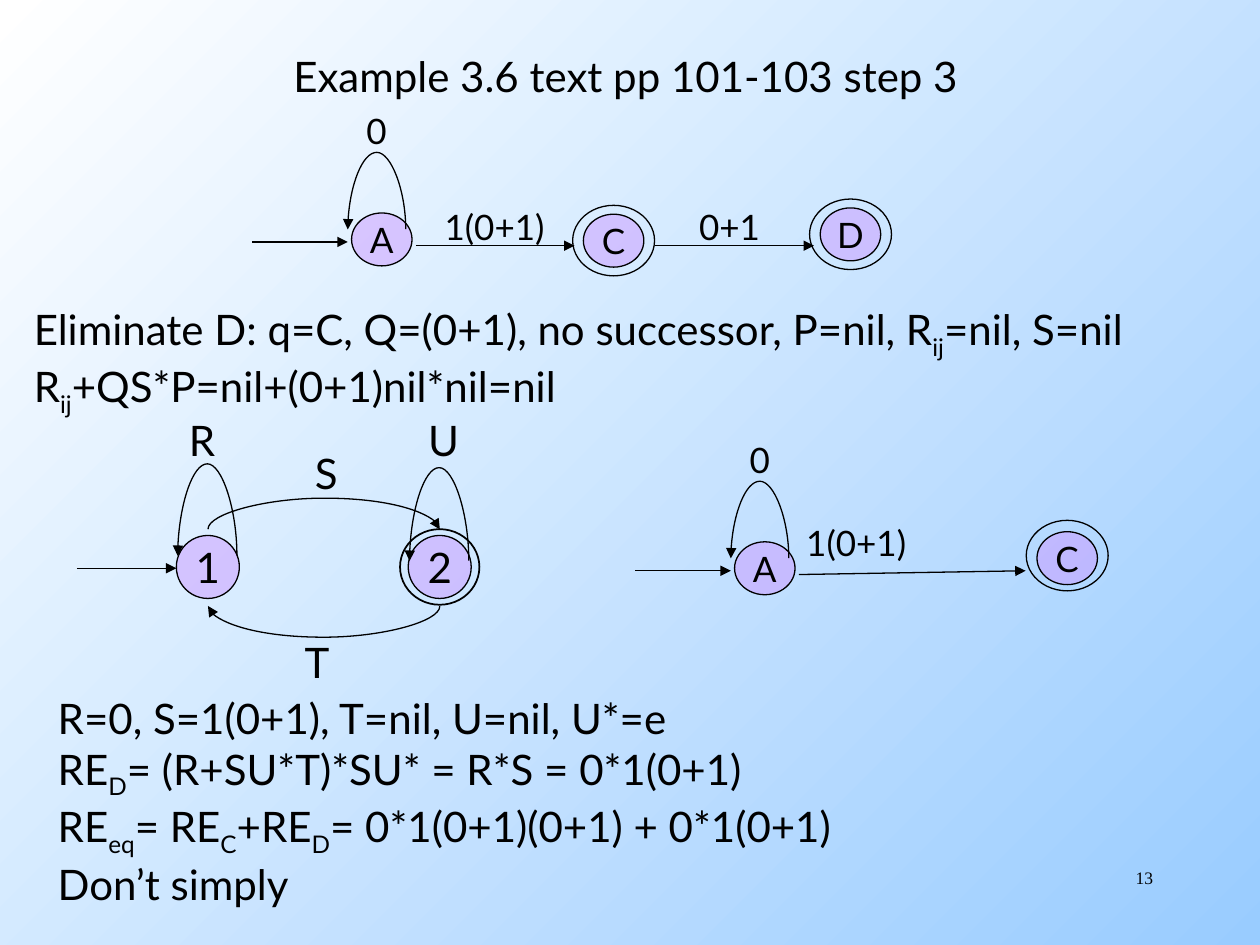
from dataclasses import dataclass
from typing import Any

from lxml.etree import SubElement
from pptx import Presentation
from pptx.dml.color import RGBColor
from pptx.enum.shapes import MSO_CONNECTOR as Link, MSO_SHAPE as Preset
from pptx.enum.text import MSO_ANCHOR as Anchor, MSO_AUTO_SIZE as Fit, PP_ALIGN as Align
from pptx.oxml.ns import qn
from pptx.util import Inches, Pt

BLACK = RGBColor(0x00, 0x00, 0x00)
WHITE = RGBColor(0xFF, 0xFF, 0xFF)
SKY = RGBColor(0x99, 0xCC, 0xFF)
LILAC = RGBColor(0xCC, 0x99, 0xFF)


@dataclass
class Sketch:
    """Draws automata on a page whose grid has 100 columns and 75 rows."""

    page: Any
    cell: int = Inches(0.1)
    font: str = "Lato"
    small: int = 20
    large: int = 24
    stroke: float = 0.75
    sliver: float = 0.02

    def at(self, *cells):
        return [round(count * self.cell) for count in cells]

    def backdrop(self, first, last):
        fill = self.page.background.fill
        fill.gradient()
        fill.gradient_angle = 315
        for stop, color, position in zip(fill.gradient_stops, (first, last), (0, 1)):
            stop.color.rgb = color
            stop.position = position

    def add_spans(self, para, text, size, font=None):
        for index, part in enumerate(text.split("_")):
            span = para.add_run()
            span.text = part
            span.font.size = Pt(size)
            span.font.name = font or self.font
            span.font.color.rgb = BLACK
            if index % 2:
                span.font._element.set("baseline", "-25000")

    def text(self, lines, column, row, width, height, size=24, wrap=True, font=None, align=None):
        box = self.page.shapes.add_textbox(*self.at(column, row, width, height))
        frame = box.text_frame
        frame.word_wrap = wrap
        frame.auto_size = Fit.SHAPE_TO_FIT_TEXT
        for index, line in enumerate(lines):
            para = frame.add_paragraph() if index else frame.paragraphs[0]
            para.alignment = align
            self.add_spans(para, line, size, font)

    def label(self, text, column, row, width, size):
        height = 4.4 if size == self.small else 5.1
        self.text([text], column, row, width, height, size, wrap=False)

    def oval(self, middle, center, width, height, stroke):
        left, top = middle - width / 2, center - height / 2
        shape = self.page.shapes.add_shape(Preset.OVAL, *self.at(left, top, width, height))
        shape.shadow.inherit = False
        shape.fill.background()
        shape.line.color.rgb = BLACK
        shape.line.width = Pt(stroke)
        return shape

    def state(self, name, middle, center, width=4.8, height=4.2, size=20):
        shape = self.oval(middle, center, width, height, self.stroke)
        shape.fill.solid()
        shape.fill.fore_color.rgb = LILAC
        color = shape.element.spPr.find(qn("a:solidFill"))[0]
        SubElement(color, qn("a:alpha"), val="50000")
        frame = shape.text_frame
        frame.word_wrap = False
        frame.vertical_anchor = Anchor.MIDDLE
        para = frame.paragraphs[0]
        para.alignment = Align.CENTER
        self.add_spans(para, name, size)

    def final_state(self, name, middle, center, drop=0):
        self.oval(middle, center, 6.5, 5.6, self.stroke)
        self.state(name, middle, center + drop)

    def link(self, kind, *ends):
        line = self.page.shapes.add_connector(kind, *self.at(*ends))
        line.line.color.rgb = BLACK
        line.line.width = Pt(self.stroke)
        SubElement(line.line._get_or_add_ln(), qn("a:tailEnd"), type="triangle")
        SubElement(line.element.spPr, qn("a:effectLst"))
        return line

    def arrow(self, *ends):
        self.link(Link.STRAIGHT, *ends)

    def arc(self, start, end, row, lift):
        rightward, downward = end > start, lift < 0
        turn = 90 if rightward or downward else 270
        middle, half = (start + end) / 2, abs(end - start) / 2
        across = [middle, middle + self.sliver]
        along = [row - half, row + half]
        if turn == 270 or downward:
            across.reverse()
        if turn == 270 or rightward:
            along.reverse()
        curve = self.link(Link.CURVE, across[0], along[0], across[1], along[1])
        properties = curve.element.spPr
        properties.find(qn("a:xfrm")).set("rot", str(turn * 60000))
        guides = properties.find(qn("a:prstGeom")).find(qn("a:avLst"))
        bend = round(-abs(lift) / self.sliver * 100000)
        SubElement(guides, qn("a:gd"), name="adj1", fmla=f"val {bend}")

    def start_state(self, middle, center):
        self.state("A", middle, center)
        self.arrow(middle - 10.3, center + 0.2, middle - 2.7, center + 0.2)
        self.label("0", middle - 2.2, center - 10.8, 3.5, self.small)
        self.arc(middle + 1.9, middle - 2.7, center - 0.8, 6.2)


def main():
    deck = Presentation()
    deck.slide_width, deck.slide_height = Inches(10), Inches(7.5)
    sketch = Sketch(deck.slides.add_slide(deck.slide_layouts[6]))
    small, large = sketch.small, sketch.large
    sketch.backdrop(WHITE, SKY)
    sketch.text(["13"], 71.7, 68.3, 20.8, 5, 10, font="Times New Roman", align=Align.RIGHT)
    sketch.label("Example 3.6 text pp 101-103 step 3", 22.3, 3.5, 55.3, large)
    sketch.text([
        "Eliminate D: q=C, Q=(0+1), no successor, P=nil, R_ij_=nil, S=nil",
        "R_ij_+QS*P=nil+(0+1)nil*nil=nil",
    ], 1.7, 23.6, 96.7, 9.1)

    sketch.start_state(30.3, 19)
    sketch.final_state("C", 48.7, 19.1)
    sketch.final_state("D", 67.5, 18.6)
    for label, column, width, start in (("1(0+1)", 34.3, 10.8, 33), ("0+1", 54.5, 7.1, 52)):
        sketch.label(label, column, 15.8, width, small)
        sketch.arrow(start, 19.5, start + 12.6, 19.5)

    sketch.start_state(60.7, 45.1)
    sketch.arrow(63.4, 45.6, 81.4, 45.3)
    sketch.label("1(0+1)", 63, 40.9, 10.8, small)
    sketch.final_state("C", 84.7, 44.1, 0.2)

    first, second, center = 16.5, 34.9, 45
    for name, middle, row, lift in (("1", first, 44.1, 7.4), ("2", second, 44.5, 7.5)):
        sketch.state(name, middle, center, 5, 5, large)
        sketch.arc(middle + 2.3, middle - 2.4, row, lift)
    sketch.oval(second, center, 6.3, 6, 1)
    sketch.arrow(6.1, 45.1, 14, 45.1)
    sketch.arc(first, second, 42, 2.5)
    sketch.arc(second, first, 48.1, -2.5)
    for name, column, row in (("R", 14, 32.4), ("U", 33, 32.4), ("S", 24, 35), ("T", 23.2, 50)):
        sketch.label(name, column, row, 4.1, large)

    sketch.text([
        "R=0, S=1(0+1), T=nil, U=nil, U*=e",
        "RE_D_= (R+SU*T)*SU* = R*S = 0*1(0+1)",
        "RE_eq_= RE_C_+RE_D_= 0*1(0+1)(0+1) + 0*1(0+1)",
        "Don’t simply",
    ], 3.6, 54.5, 73.2, 17.2)
    deck.save("out.pptx")


if __name__ == "__main__":
    main()
